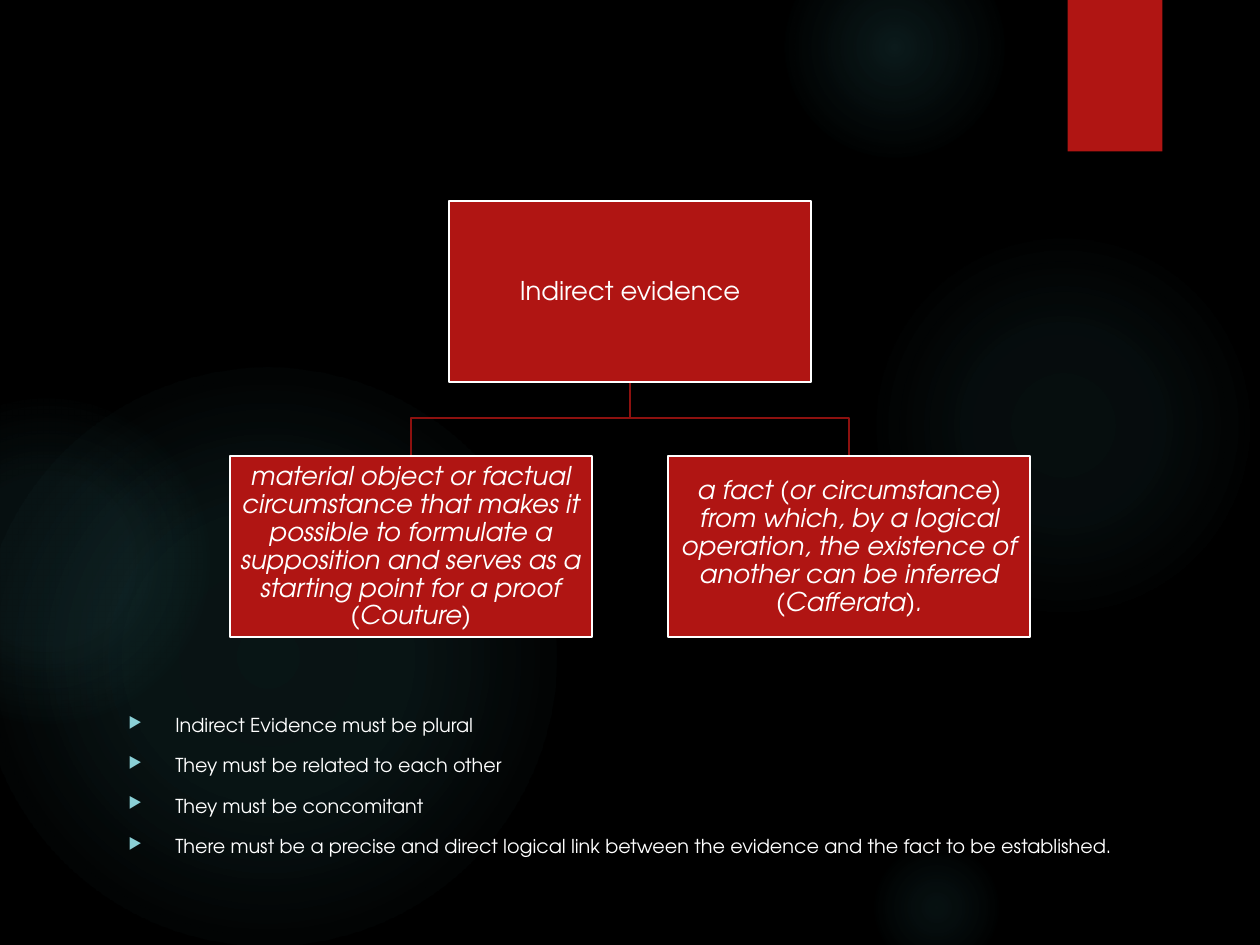
"""Build a slide that defines indirect evidence and lists its requirements."""
from lxml.etree import SubElement
from pptx import Presentation
from pptx.dml.color import RGBColor
from pptx.enum.shapes import MSO_SHAPE
from pptx.enum.text import MSO_ANCHOR, PP_ALIGN
from pptx.oxml import parse_xml
from pptx.oxml.ns import nsdecls, qn
from pptx.util import Inches, Pt

SLIDE_WIDTH, SLIDE_HEIGHT = Inches(14.22), Inches(10.67)
FONT = "TeX Gyre Adventor"
BLACK, WHITE, RED, DARK_RED = "000000", "FFFFFF", "B01513", "8D110F"
TEAL, PALE_TEAL = "50B9C1", "8AD0D6"

# Positions and sizes are percentages of the slide's width and height.
BOX_WIDTH, BOX_HEIGHT = 28.75, 19.15
ROOT_CENTER, ROOT_TOP = 50, 21.3
BRANCH_OFFSET, BRANCH_TOP, BUS_LEVEL = 17.4, 48.3, 44.2

# Center x, center y, diameter, then (position, opacity) of each gradient stop.
GLOWS = [
    (84.35, 45.03, 30.87, [(0, 7), (36, 6), (69, 0)]),
    (70.99, 5.01, 17.51, [(0, 14), (36, 7), (73, 0)]),
    (74.33, 96.06, 10.83, [(0, 9), (36, 5), (66, 0)]),
    (21.24, 69.45, 45.85, [(0, 11), (36, 10), (75, 0)]),
    (3.69, 59.37, 25.81, [(0, 8), (36, 8), (72, 0)]),
]
DEFINITIONS = [
    "material object or factual circumstance that makes it possible to formulate "
    "a supposition and serves as a starting point for a proof (Couture)",
    "a fact (or circumstance) from which, by a logical operation, the existence "
    "of another can be inferred (Cafferata).",
]
REQUIREMENTS = [
    "Indirect Evidence must be plural",
    "They must be related to each other",
    "They must be concomitant",
    "There must be a precise and direct logical link between the evidence "
    "and the fact to be established.",
]


def color(hex_value):
    """Turn a hex string into a colour."""
    return RGBColor.from_string(hex_value)


def across(percent):
    """Return a share of the slide's width."""
    return round(SLIDE_WIDTH * percent / 100)


def down(percent):
    """Return a share of the slide's height."""
    return round(SLIDE_HEIGHT * percent / 100)


def style_font(paragraph, size, italic=False):
    """Set the common typeface and colour on a paragraph."""
    paragraph.font.name = FONT
    paragraph.font.size = Pt(size)
    paragraph.font.italic = italic
    paragraph.font.color.rgb = color(WHITE)


def add_glow(slide, center_x, center_y, diameter, stops):
    """Add a soft circle that fades out from its center."""
    size = across(diameter)
    glow = slide.shapes.add_shape(
        MSO_SHAPE.OVAL, across(center_x) - size // 2, down(center_y) - size // 2, size, size)
    glow.shadow.inherit = False
    glow.line.fill.background()
    stop_xml = "".join(
        f'<a:gs pos="{position * 1000}"><a:srgbClr val="{TEAL}">'
        f'<a:alpha val="{opacity * 1000}"/></a:srgbClr></a:gs>'
        for position, opacity in stops)
    gradient = parse_xml(
        f'<a:gradFill {nsdecls("a")}><a:gsLst>{stop_xml}</a:gsLst><a:path path="circle">'
        '<a:fillToRect l="50000" t="50000" r="50000" b="50000"/></a:path></a:gradFill>')
    glow._element.spPr.find(qn("a:prstGeom")).addnext(gradient)


def add_panel(slide, left, top, width, height):
    """Add a plain red rectangle."""
    panel = slide.shapes.add_shape(
        MSO_SHAPE.RECTANGLE, across(left), down(top), across(width), down(height))
    panel.shadow.inherit = False
    panel.fill.solid()
    panel.fill.fore_color.rgb = color(RED)
    panel.line.fill.background()
    return panel


def add_box(slide, center, top, text, italic=False):
    """Add one labelled box of the tree."""
    box = add_panel(slide, center - BOX_WIDTH / 2, top, BOX_WIDTH, BOX_HEIGHT)
    box.line.color.rgb = color(WHITE)
    box.line.width = Pt(1.5)
    frame = box.text_frame
    frame.word_wrap = True
    frame.vertical_anchor = MSO_ANCHOR.MIDDLE
    frame.margin_left = frame.margin_right = Inches(0.01)
    frame.margin_top = frame.margin_bottom = Inches(0.01)
    label = frame.paragraphs[0]
    label.text = text
    label.alignment = PP_ALIGN.CENTER
    label.line_spacing = 0.9
    style_font(label, 21, italic)


def add_branch(slide, center):
    """Draw the elbow line from the root box to a definition."""
    builder = slide.shapes.build_freeform(across(ROOT_CENTER), down(ROOT_TOP + BOX_HEIGHT))
    builder.add_line_segments([
        (across(ROOT_CENTER), down(BUS_LEVEL)),
        (across(center), down(BUS_LEVEL)),
        (across(center), down(BRANCH_TOP)),
    ], close=False)
    branch = builder.convert_to_shape()
    branch.shadow.inherit = False
    branch.fill.background()
    branch.line.color.rgb = color(DARK_RED)
    branch.line.width = Pt(1.5)


def add_bullet(paragraph):
    """Give a paragraph a hanging triangle bullet."""
    properties = paragraph._p.get_or_add_pPr()
    indent = Inches(0.53)
    properties.set("marL", str(indent))
    properties.set("indent", str(-indent))
    bullet_color = SubElement(properties, qn("a:buClr"))
    SubElement(bullet_color, qn("a:srgbClr"), val=PALE_TEAL)
    SubElement(properties, qn("a:buSzPct"), val="80000")
    SubElement(properties, qn("a:buChar"), char="▶")


def add_requirements(slide, left, top, width, height):
    """Add the bulleted list of requirements."""
    frame = slide.shapes.add_textbox(
        across(left), down(top), across(width), down(height)).text_frame
    frame.word_wrap = True
    frame.text = "\n".join(REQUIREMENTS)
    for requirement in frame.paragraphs:
        requirement.space_before = Pt(14.2)
        add_bullet(requirement)
        style_font(requirement, 15.6)


def main():
    """Build and save the slide."""
    deck = Presentation()
    deck.slide_width, deck.slide_height = SLIDE_WIDTH, SLIDE_HEIGHT
    slide = deck.slides.add_slide(deck.slide_layouts[6])
    slide.background.fill.solid()
    slide.background.fill.fore_color.rgb = color(BLACK)
    for glow in GLOWS:
        add_glow(slide, *glow)
    add_panel(slide, 84.74, 0, 7.52, 16.03)
    add_requirements(slide, 9.49, 74.98, 86.08, 17.53)
    centers = [ROOT_CENTER - BRANCH_OFFSET, ROOT_CENTER + BRANCH_OFFSET]
    for center in centers:
        add_branch(slide, center)
    add_box(slide, ROOT_CENTER, ROOT_TOP, "Indirect evidence")
    for center, definition in zip(centers, DEFINITIONS):
        add_box(slide, center, BRANCH_TOP, definition, italic=True)
    deck.save("out.pptx")


if __name__ == "__main__":
    main()
